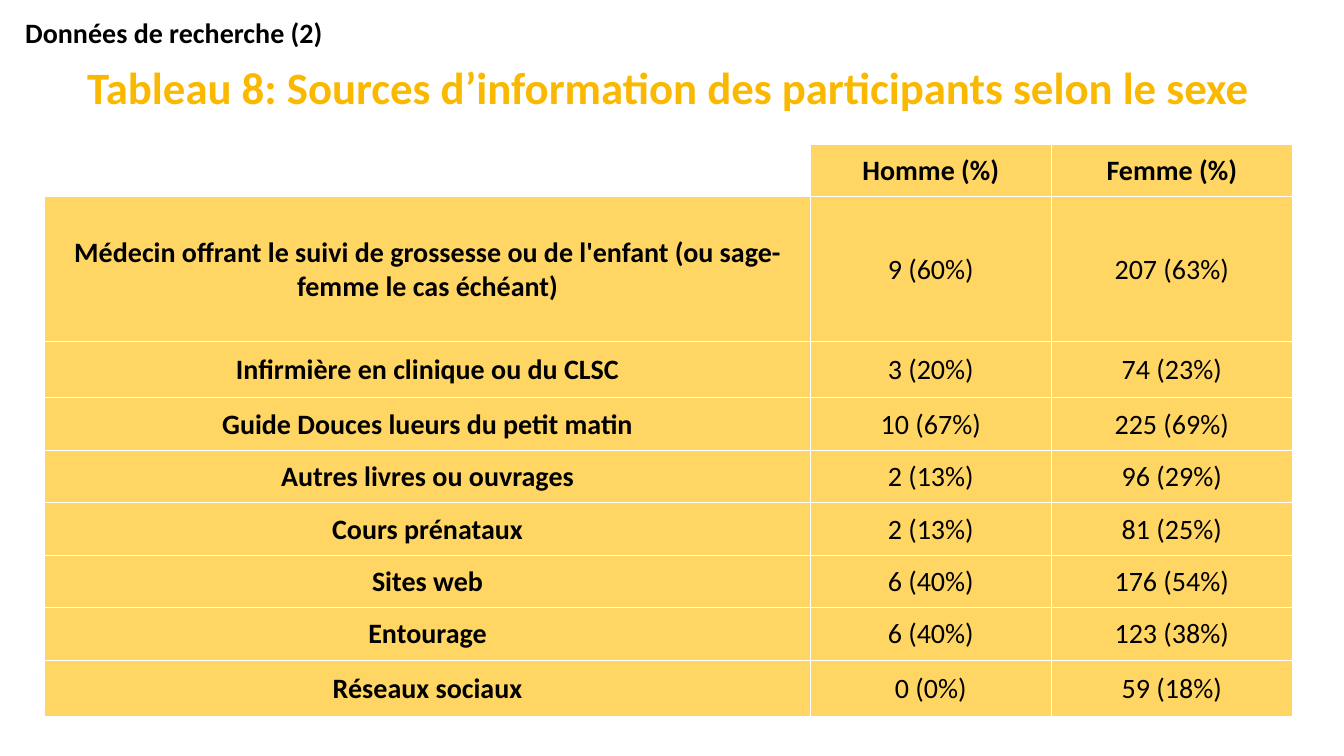
from lxml.etree import SubElement
from pptx import Presentation
from pptx.dml.color import RGBColor
from pptx.enum.text import MSO_ANCHOR, PP_ALIGN
from pptx.oxml.ns import qn
from pptx.util import Pt

BLACK = RGBColor(0x00, 0x00, 0x00)
GOLD = RGBColor(0xFA, 0xB9, 0x00)
SAND = RGBColor(0xFF, 0xD6, 0x63)

CAPTION = "Tableau 8: Sources d’information des participants selon le sexe"
SOURCES = [
    ("", "Homme (%)", "Femme (%)"),
    ("Médecin offrant le suivi de grossesse ou de l'enfant (ou sage-femme le cas échéant)",
     "9 (60%)", "207 (63%)"),
    ("Infirmière en clinique ou du CLSC", "3 (20%)", "74 (23%)"),
    ("Guide Douces lueurs du petit matin", "10 (67%)", "225 (69%)"),
    ("Autres livres ou ouvrages", "2 (13%)", "96 (29%)"),
    ("Cours prénataux", "2 (13%)", "81 (25%)"),
    ("Sites web", "6 (40%)", "176 (54%)"),
    ("Entourage", "6 (40%)", "123 (38%)"),
    ("Réseaux sociaux", "0 (0%)", "59 (18%)"),
]
COLUMN_WIDTHS = [546.8, 172.2, 172.2]
ROW_HEIGHTS = [80, 37.4, 103.5, 40.2] + [37.5] * 5 + [40.2]


def write(frame, text, size=20, color=BLACK, bold=True, align=PP_ALIGN.CENTER):
    paragraph = frame.paragraphs[0]
    paragraph.alignment = align
    paragraph.font.size = Pt(size)
    if text:
        run = paragraph.add_run()
        run.text = text
        run.font.name = "Calibri"
        run.font.size = Pt(size)
        run.font.bold = bold
        run.font.color.rgb = color


def draw_borders(cell):
    properties = cell._tc.get_or_add_tcPr()
    for side in ("a:lnL", "a:lnR", "a:lnT", "a:lnB"):
        border = SubElement(properties, qn(side), w=str(Pt(1)))
        SubElement(SubElement(border, qn("a:solidFill")), qn("a:srgbClr"), val="FFFFFF")


deck = Presentation()
deck.slide_width, deck.slide_height = Pt(960), Pt(540)
slide = deck.slides.add_slide(deck.slide_layouts[5])

sources_table = slide.shapes.add_table(
    len(ROW_HEIGHTS), len(COLUMN_WIDTHS), Pt(32), Pt(23.1),
    Pt(sum(COLUMN_WIDTHS)), Pt(sum(ROW_HEIGHTS))).table
sources_table.first_row = False
sources_table.horz_banding = False
for column, width in zip(sources_table.columns, COLUMN_WIDTHS):
    column.width = Pt(width)
for row, height in zip(sources_table.rows, ROW_HEIGHTS):
    row.height = Pt(height)

for cell in sources_table.iter_cells():
    draw_borders(cell)
    cell.fill.background()
    cell.vertical_anchor = MSO_ANCHOR.MIDDLE
    cell.margin_left = cell.margin_right = cell.margin_top = Pt(0.7)
    cell.margin_bottom = Pt(0)

caption_cell = sources_table.cell(0, 0)
caption_cell.merge(sources_table.cell(0, 2))
write(caption_cell.text_frame, CAPTION, size=32, color=GOLD)

for row_number, entries in enumerate(SOURCES, start=1):
    for column_number, entry in enumerate(entries):
        cell = sources_table.cell(row_number, column_number)
        write(cell.text_frame, entry, bold=row_number == 1 or column_number == 0)
        if entry:
            cell.fill.solid()
            cell.fill.fore_color.rgb = SAND

heading = slide.shapes.title
heading.left, heading.top, heading.width, heading.height = Pt(10.8), Pt(7.2), Pt(235.5), Pt(31.5)
heading.text_frame.word_wrap = True
write(heading.text_frame, "Données de recherche (2)", align=PP_ALIGN.LEFT)
slide.shapes._spTree.append(heading._element)

deck.save("out.pptx")
